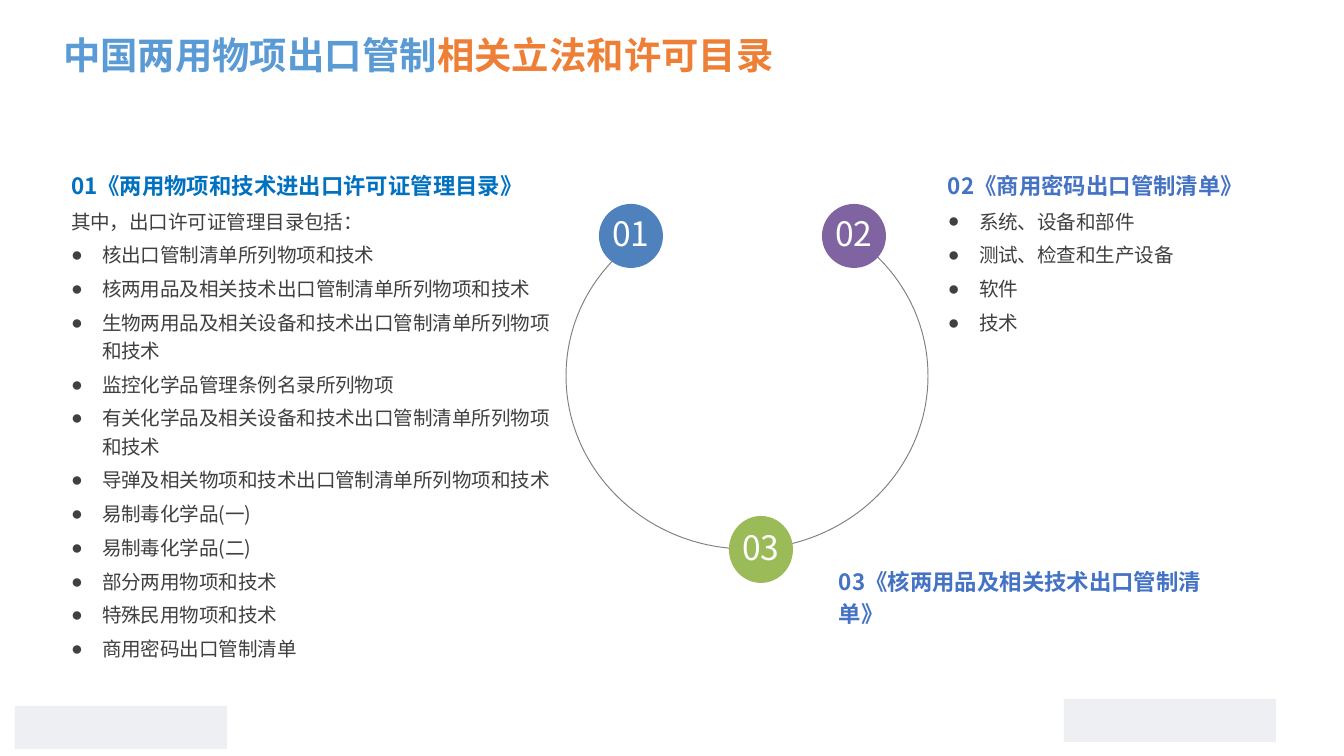
import pptx
import pptx.dml.color
import pptx.enum.shapes
import pptx.enum.text
import pptx.oxml.ns
import pptx.util
from lxml import etree

PX = 914400 / 134.4
FONT = "Noto Sans CJK SC"
BLUE = "4472C4"
DARK = "404040"
INDENT = 31
RING_CENTRE = 747
RING_LEFT_HALF = [(630, 245), (591, 276), (566, 323), (566, 376),
                  (566, 471), (647, 549), (747, 549)]

CATALOGUE = [
    "核出口管制清单所列物项和技术",
    "核两用品及相关技术出口管制清单所列物项和技术",
    "生物两用品及相关设备和技术出口管制清单所列物项和技术",
    "监控化学品管理条例名录所列物项",
    "有关化学品及相关设备和技术出口管制清单所列物项和技术",
    "导弹及相关物项和技术出口管制清单所列物项和技术",
    "易制毒化学品(一)",
    "易制毒化学品(二)",
    "部分两用物项和技术",
    "特殊民用物项和技术",
    "商用密码出口管制清单",
]
CRYPTOGRAPHY = ["系统、设备和部件", "测试、检查和生产设备", "软件", "技术"]


def px(value):
    """Turn a length in px into EMU."""
    return pptx.util.Emu(round(value * PX))


def colour(value):
    """Turn a hex string into a colour."""
    return pptx.dml.color.RGBColor.from_string(value)


def assign(target, values):
    """Set each attribute named in a dict of format values."""
    for name, value in values.items():
        setattr(target, name, value)


def place(shape, left, top, width, height):
    """Move and size a shape."""
    assign(shape, {"left": px(left), "top": px(top),
                   "width": px(width), "height": px(height)})


def add_span(para, text, size, hue, bold=False, latin=FONT):
    """Add a formatted run with Latin and East Asian fonts."""
    span = para.add_run()
    span.text = text
    assign(span.font, {"size": pptx.util.Pt(size), "bold": bold, "name": latin})
    span.font.color.rgb = colour(hue)
    face = etree.Element(pptx.oxml.ns.qn("a:ea"), typeface=FONT)
    span.font._element.find(pptx.oxml.ns.qn("a:latin")).addnext(face)


def set_bullet(para, bulleted):
    """Give a paragraph a hanging bullet, or none."""
    indent = px(INDENT) if bulleted else 0
    properties = para._p.get_or_add_pPr()
    properties.set("marL", str(indent))
    properties.set("indent", str(-indent))
    tag = "a:buChar" if bulleted else "a:buNone"
    bullet = etree.SubElement(properties, pptx.oxml.ns.qn(tag))
    if bulleted:
        bullet.set("char", "●")


def format_frame(frame, margin_x=0, margin_y=0):
    """Make a text frame wrap, grow and start at the top."""
    assign(frame, {
        "word_wrap": True,
        "auto_size": pptx.enum.text.MSO_AUTO_SIZE.SHAPE_TO_FIT_TEXT,
        "vertical_anchor": pptx.enum.text.MSO_ANCHOR.TOP,
        "margin_left": px(margin_x), "margin_right": px(margin_x),
        "margin_top": px(margin_y), "margin_bottom": px(margin_y),
    })


def fill_title(box):
    """Write the two-coloured title."""
    place(box, 50, 26, 742, 59)
    format_frame(box.text_frame, 13, 6)
    para = box.text_frame.paragraphs[0]
    para.alignment = pptx.enum.text.PP_ALIGN.LEFT
    add_span(para, "中国两用物项出口管制", 20, "5B9BD5", True)
    add_span(para, "相关立法和许可目录", 20, "ED8036", True, "Roboto Condensed")


def fill_list(box, bounds, heading, hue, items=(), intro=None):
    """Write a heading, an optional intro line and bulleted items."""
    place(box, *bounds)
    frame = box.text_frame
    format_frame(frame)
    rows = [(heading, 12, hue, True, False)]
    if intro:
        rows.append((intro, 10.5, DARK, False, False))
    rows += [(item, 10.5, DARK, False, True) for item in items]
    for index, (text, size, shade, bold, bulleted) in enumerate(rows):
        para = frame.add_paragraph() if index else frame.paragraphs[0]
        assign(para, {"line_spacing": 1.2,
                      "space_before": pptx.util.Pt(3 if index else 0),
                      "alignment": pptx.enum.text.PP_ALIGN.LEFT})
        set_bullet(para, bulleted)
        add_span(para, text, size, shade, bold)


def curve_segments(shape):
    """Merge each three line segments of a freeform into one Bezier curve."""
    lines = list(shape._element.iter(pptx.oxml.ns.qn("a:lnTo")))
    for start in range(0, len(lines), 3):
        curve = etree.Element(pptx.oxml.ns.qn("a:cubicBezTo"))
        lines[start].addprevious(curve)
        for line in lines[start:start + 3]:
            curve.append(line[0])
            line.getparent().remove(line)


def add_ring(page):
    """Draw the open ring that joins the numbered circles."""
    right_half = [(2 * RING_CENTRE - x, y) for x, y in RING_LEFT_HALF[-2::-1]]
    points = [(px(x), px(y)) for x, y in RING_LEFT_HALF + right_half]
    builder = page.shapes.build_freeform(*points[0])
    builder.add_line_segments(points[1:], close=False)
    ring = builder.convert_to_shape()
    curve_segments(ring)
    ring.shadow.inherit = False
    ring.fill.background()
    ring.line.color.rgb = colour("808080")
    ring.line.width = pptx.util.Pt(0.5)


def add_plain(page, kind, bounds, hue):
    """Add a filled shape without line or shadow."""
    shape = page.shapes.add_shape(kind, *map(px, bounds))
    shape.shadow.inherit = False
    shape.fill.solid()
    shape.fill.fore_color.rgb = colour(hue)
    shape.line.fill.background()
    return shape


def add_number(page, text, bounds, hue):
    """Add a numbered circle."""
    circle = add_plain(page, pptx.enum.shapes.MSO_SHAPE.OVAL, bounds, hue)
    frame = circle.text_frame
    assign(frame, {"margin_left": 0, "margin_right": 0,
                   "margin_top": 0, "margin_bottom": px(5),
                   "vertical_anchor": pptx.enum.text.MSO_ANCHOR.MIDDLE})
    frame.paragraphs[0].alignment = pptx.enum.text.PP_ALIGN.CENTER
    add_span(frame.paragraphs[0], text, 18, "FFFFFF")


def main():
    """Build the slide and save the deck."""
    deck = pptx.Presentation()
    assign(deck, {"slide_width": px(1344), "slide_height": px(756)})
    page = deck.slides.add_slide(deck.slide_layouts.get_by_name("Comparison"))
    title, first, second, third, spare = page.placeholders
    spare._element.getparent().remove(spare._element)

    add_ring(page)
    add_number(page, "01", (599, 204, 64, 64), "4F81BD")
    add_number(page, "03", (729, 516, 64, 67), "9BBB59")
    add_number(page, "02", (822, 204, 64, 64), "8064A2")
    for left, top in ((15, 706), (1064, 699)):
        add_plain(page, pptx.enum.shapes.MSO_SHAPE.RECTANGLE,
                  (left, top, 212, 43), "EEEFF3")

    fill_title(title)
    fill_list(first, (71, 167, 495, 497), "01《两用物项和技术进出口许可证管理目录》",
              "0070C0", CATALOGUE, "其中，出口许可证管理目录包括：")
    fill_list(second, (948, 167, 309, 237), "02《商用密码出口管制清单》",
              BLUE, CRYPTOGRAPHY)
    fill_list(third, (839, 563, 397, 30), "03《核两用品及相关技术出口管制清单》", BLUE)
    deck.save("out.pptx")


if __name__ == "__main__":
    main()
